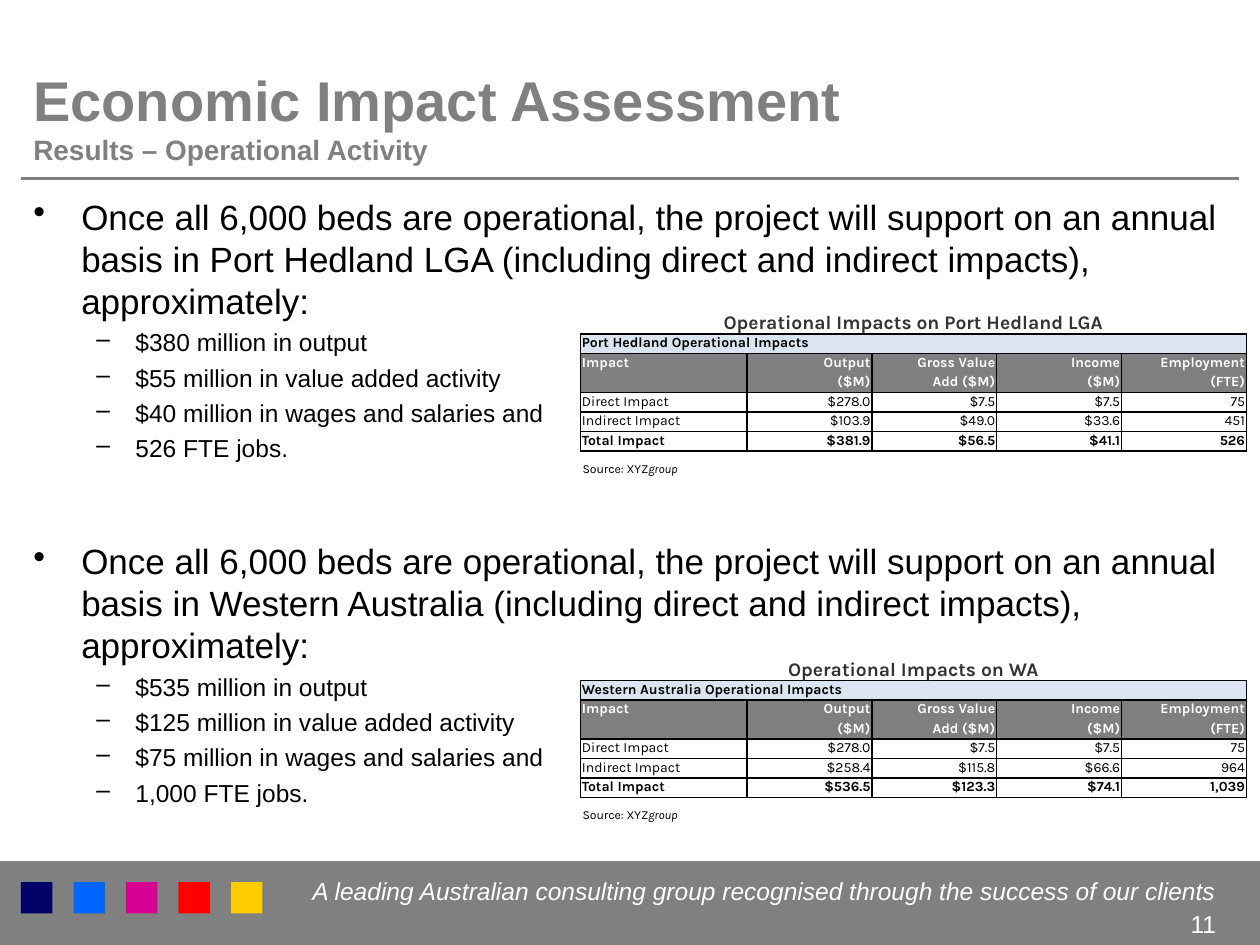
import dataclasses

import pptx
import pptx.dml.color
import pptx.enum.shapes
import pptx.enum.text
import pptx.oxml.ns
import pptx.util
from lxml import etree

ALIGN = pptx.enum.text.PP_ALIGN
ANCHOR = pptx.enum.text.MSO_ANCHOR
COLUMNS, ROWS = 120, 90  # slide grid of square units, twelve to the inch


@dataclasses.dataclass(frozen=True)
class Theme:
    grey: str = "808080"
    header: str = "7F7F7F"
    band: str = "DBE5F1"
    caption: str = "333333"
    black: str = "000000"
    white: str = "FFFFFF"
    squares: tuple = ("000066", "0066FF", "D60093", "FF0000", "FFCC00")
    font: str = "Arial"
    table_font: str = "Karla"
    title_size: int = 32
    subtitle_size: int = 16
    body_size: int = 20
    small_size: int = 14
    caption_size: int = 11
    table_size: int = 8
    source_size: int = 7


THEME = Theme()

HEADINGS = [("Impact", ""), ("Output", "($M)"), ("Gross Value", "Add ($M)"),
            ("Income", "($M)"), ("Employment", "(FTE)")]
BULLETS = [
    ("Once all 6,000 beds are operational, the project will support on an annual basis "
     "in Port Hedland LGA (including direct and indirect impacts), approximately:",
     ["$380 million in output", "$55 million in value added activity",
      "$40 million in wages and salaries and", "526 FTE jobs."]),
    ("Once all 6,000 beds are operational, the project will support on an annual basis "
     "in Western Australia (including direct and indirect impacts), approximately:",
     ["$535 million in output", "$125 million in value added activity",
      "$75 million in wages and salaries and", "1,000 FTE jobs."]),
]
PANELS = [
    (29, "Operational Impacts on Port Hedland LGA", "Port Hedland Operational Impacts",
     [["Direct Impact", "$278.0", "$7.5", "$7.5", "75"],
      ["Indirect Impact", "$103.9", "$49.0", "$33.6", "451"],
      ["Total Impact", "$381.9", "$56.5", "$41.1", "526"]]),
    (62, "Operational Impacts on WA", "Western Australia Operational Impacts",
     [["Direct Impact", "$278.0", "$7.5", "$7.5", "75"],
      ["Indirect Impact", "$258.4", "$115.8", "$66.6", "964"],
      ["Total Impact", "$536.5", "$123.3", "$74.1", "1,039"]]),
]


def units(count):
    return pptx.util.Inches(count / 12)


def rgb(color):
    return pptx.dml.color.RGBColor.from_string(color)


def style(run, size, color, font=THEME.font, bold=False, italic=False):
    run.font.size = pptx.util.Pt(size)
    run.font.name = font
    run.font.color.rgb = rgb(color)
    run.font.bold = bold
    run.font.italic = italic


def add_text(slide, box, text, size, color, align=ALIGN.LEFT, anchor=ANCHOR.TOP, **font):
    """Add a wrapped text box and return its first paragraph."""
    frame = slide.shapes.add_textbox(*map(units, box)).text_frame
    frame.word_wrap = True
    frame.vertical_anchor = anchor
    frame.text = text
    paragraph = frame.paragraphs[0]
    paragraph.alignment = align
    for run in paragraph.runs:
        style(run, size, color, **font)
    return paragraph


def add_block(slide, box, color):
    shape = slide.shapes.add_shape(pptx.enum.shapes.MSO_SHAPE.RECTANGLE, *map(units, box))
    shape.shadow.inherit = False
    shape.fill.solid()
    shape.fill.fore_color.rgb = rgb(color)
    shape.line.fill.background()


def add_footer(slide, box):
    left, top, width, height = box
    add_block(slide, box, THEME.grey)
    for index, color in enumerate(THEME.squares):
        add_block(slide, (left + 2 + 5 * index, top + 2, 3, 3), color)
    add_text(slide, (left + 28, top + 0.8, width - 31, 4),
             "A leading Australian consulting group recognised through the success of our clients",
             THEME.small_size, THEME.white, ALIGN.RIGHT, italic=True)
    add_text(slide, (left + width - 13, top + 4, 10, 4), "11",
             THEME.small_size, THEME.white, ALIGN.RIGHT)


def add_heading(slide, box):
    left, top, width, height = box
    paragraph = add_text(slide, (left, top, width - 14, height - 1),
                         "Economic Impact Assessment\vResults – Operational Activity",
                         THEME.title_size, THEME.grey, anchor=ANCHOR.MIDDLE, bold=True)
    paragraph.runs[1].font.size = pptx.util.Pt(THEME.subtitle_size)
    rule = slide.shapes.add_connector(
        pptx.enum.shapes.MSO_CONNECTOR.STRAIGHT, units(left), units(top + height),
        units(left + width), units(top + height))
    rule.line.color.rgb = rgb(THEME.grey)
    rule.line.width = pptx.util.Pt(2)
    etree.SubElement(rule._element.spPr, pptx.oxml.ns.qn("a:effectLst"))


def add_bullet(paragraph, text, character, margin, hanging, size, space):
    paragraph.text = text
    properties = paragraph._p.get_or_add_pPr()
    properties.set("marL", str(pptx.util.Inches(margin)))
    properties.set("indent", str(-pptx.util.Inches(hanging)))
    etree.SubElement(properties, pptx.oxml.ns.qn("a:buChar"), char=character)
    paragraph.space_before = pptx.util.Pt(space)
    style(paragraph.runs[0], size, THEME.black)


def add_body(slide, box):
    frame = slide.shapes.add_textbox(*map(units, box)).text_frame
    frame.word_wrap = True
    for index, (statement, details) in enumerate(BULLETS):
        paragraph = frame.add_paragraph() if index else frame.paragraphs[0]
        add_bullet(paragraph, statement, "•", 0.38, 0.38, THEME.body_size, 44 * index)
        for detail in details:
            add_bullet(frame.add_paragraph(), detail, "–", 0.81, 0.31, THEME.small_size, 3.4)


def add_borders(cell, sides):
    properties = cell._tc.get_or_add_tcPr()
    for side in "LRTB":
        line = etree.SubElement(properties, pptx.oxml.ns.qn("a:ln" + side), w="12700")
        if side in sides:
            fill = etree.SubElement(line, pptx.oxml.ns.qn("a:solidFill"))
            etree.SubElement(fill, pptx.oxml.ns.qn("a:srgbClr"), val=THEME.black)
        else:
            etree.SubElement(line, pptx.oxml.ns.qn("a:noFill"))


def fill_cell(cell, text, row, column):
    is_header = row in (1, 2)
    open_side = {1: "B", 2: "T"}.get(row)
    add_borders(cell, [side for side in "LRTB" if side != open_side or column == 0])
    background = THEME.band if row == 0 else THEME.header if is_header else None
    if background:
        cell.fill.solid()
        cell.fill.fore_color.rgb = rgb(background)
    else:
        cell.fill.background()
    cell.margin_left = cell.margin_right = cell.margin_top = pptx.util.Inches(0.01)
    cell.margin_bottom = 0
    cell.text_frame.text = text
    paragraph = cell.text_frame.paragraphs[0]
    paragraph.alignment = ALIGN.RIGHT if column else ALIGN.LEFT
    paragraph.font.size = pptx.util.Pt(THEME.table_size)
    for run in paragraph.runs:
        style(run, THEME.table_size, THEME.white if is_header else THEME.black,
              THEME.table_font, bold=row not in (3, 4))


def add_impact_panel(slide, box, caption, title, records):
    """Place a caption, an impact table and its source line in the box."""
    left, top, width, height = box
    rows = [[title] + [""] * 4, *map(list, zip(*HEADINGS)), *records]
    table = slide.shapes.add_table(len(rows), len(HEADINGS), units(left), units(top + 2.8),
                                   units(width), units(11.16)).table
    table.first_row = table.horz_banding = False
    for index, column in enumerate(table.columns):
        column.width = units(width * (0.1875 if index else 0.25))
    for row, values in enumerate(rows):
        table.rows[row].height = units(11.16 / len(rows))
        for column, value in enumerate(values):
            fill_cell(table.cell(row, column), value, row, column)
    table.cell(0, 0).merge(table.cell(0, 4))
    table.cell(1, 0).merge(table.cell(2, 0))

    add_text(slide, (left, top, width, 3.4), caption, THEME.caption_size, THEME.caption,
             ALIGN.CENTER, ANCHOR.MIDDLE, font=THEME.table_font, bold=True)
    source = add_text(slide, (left - 1, top + height - 2.6, 34, 2.6), "Source: XYZ",
                      THEME.source_size, THEME.black, anchor=ANCHOR.MIDDLE,
                      font=THEME.table_font)
    group = source.add_run()
    group.text = "group"
    style(group, THEME.source_size, THEME.black, THEME.table_font, italic=True)


def main():
    presentation = pptx.Presentation()
    presentation.slide_width, presentation.slide_height = units(COLUMNS), units(ROWS)
    slide = presentation.slides.add_slide(presentation.slide_layouts[6])
    add_footer(slide, (0, 82, COLUMNS, 8))
    add_body(slide, (2, 18, 116, 64))
    for top, caption, title, records in PANELS:
        add_impact_panel(slide, (55.3, top, 63.4, 16.9), caption, title, records)
    add_heading(slide, (2, 6, 116, 11))
    presentation.save("out.pptx")


if __name__ == "__main__":
    main()
